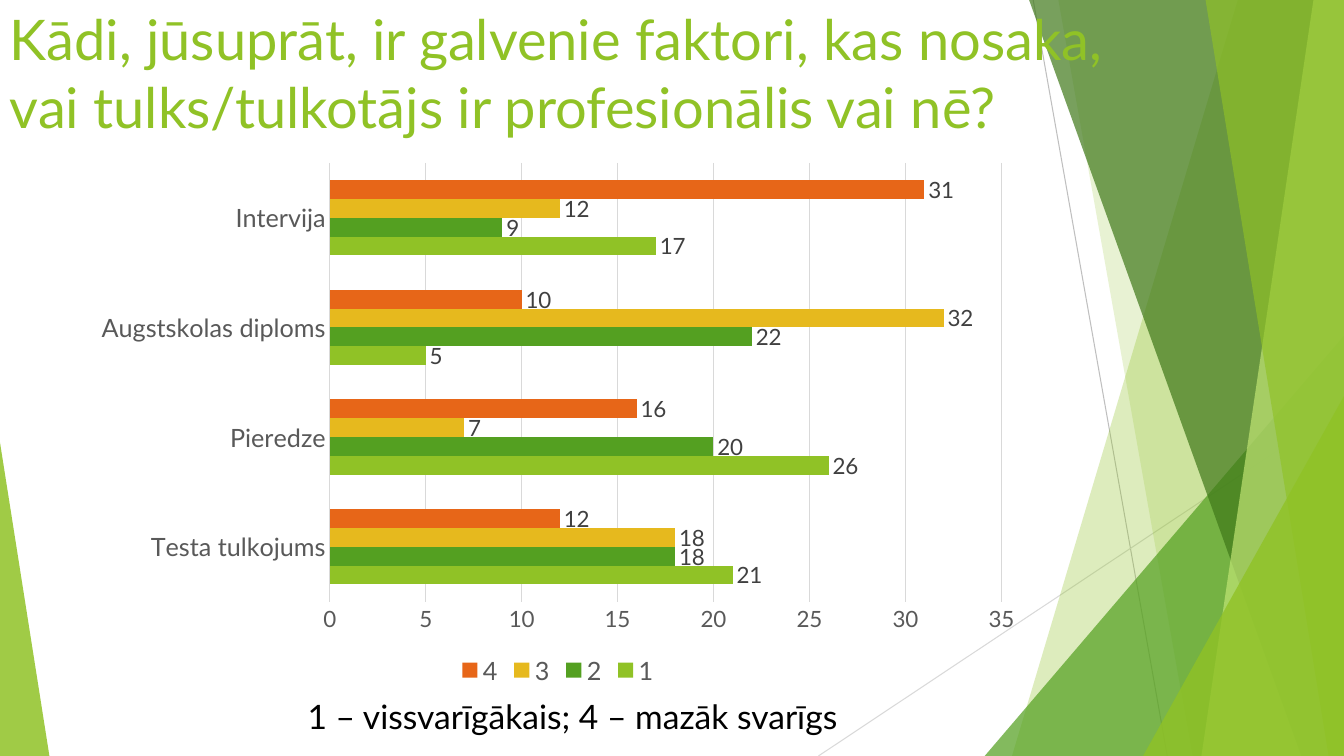
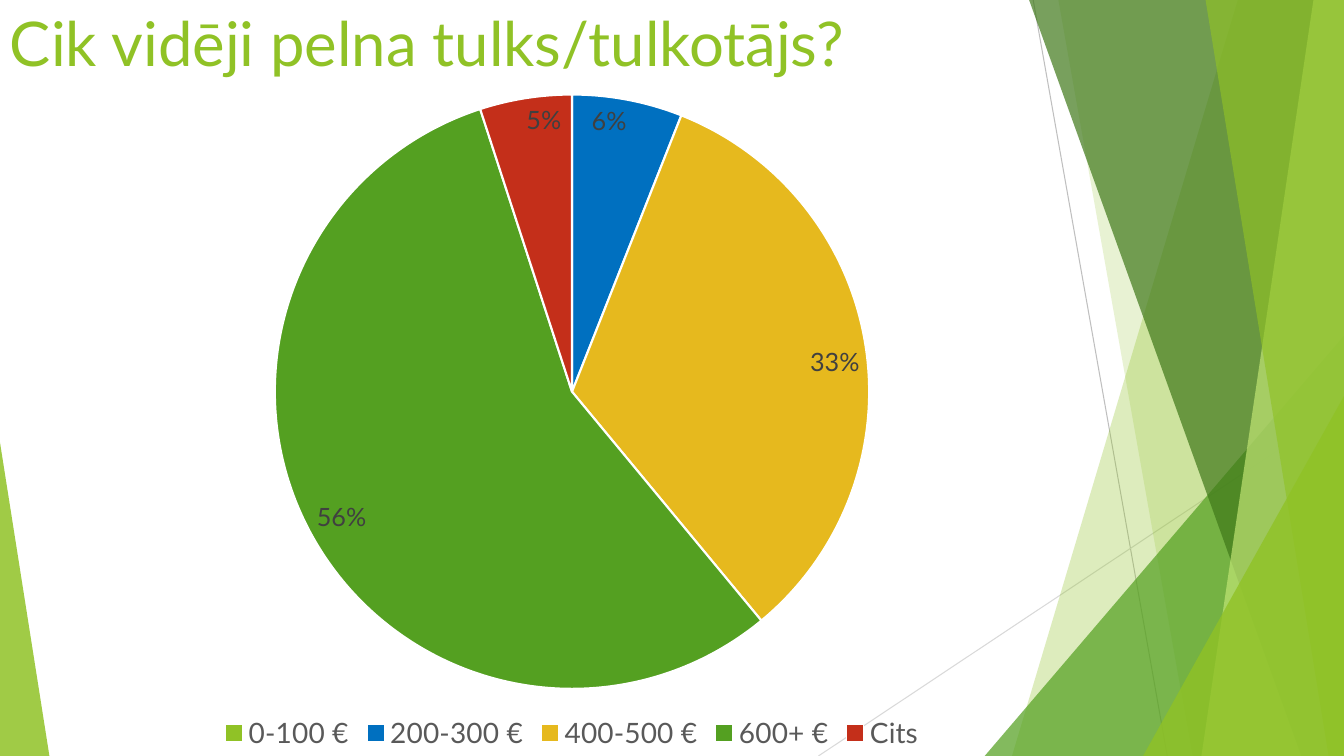
from dataclasses import dataclass

from lxml import etree
from pptx import Presentation
from pptx import util as u
from pptx.chart import data as chart_data
from pptx.dml import color
from pptx.enum import chart as chart_enum
from pptx.enum import shapes, text
from pptx.oxml import ns


@dataclass(frozen=True)
class Theme:
    font: str = "Lato"
    lime: str = "90C226"
    green: str = "54A021"
    forest: str = "3F7819"
    pale: str = "C0E474"
    gold: str = "E6B91E"
    orange: str = "E76618"
    blue: str = "0070C0"
    red: str = "C42F1A"
    white: str = "FFFFFF"
    black: str = "000000"
    label: str = "404040"
    muted: str = "595959"
    rule: str = "BFBFBF"
    grid: str = "D9D9D9"
    caption_size: int = 24
    hairline: float = 0.75


THEME = Theme()
WIDTH, HEIGHT = 960, 540

RULES = [
    ((738, 0), (833.8, HEIGHT), THEME.rule),
    ((WIDTH, 290.2), (584.6, HEIGHT), THEME.grid),
]
BACK_BANDS = [(884.2, 722.9, THEME.lime, 30), (756, 851.8, THEME.lime, 20)]
BACK_TRIANGLE = (703.4, 239.8, 256.6, 1, THEME.green, 72)
FRONT_BANDS = [
    (735.1, 929.5, THEME.forest, 70),
    (938.2, 858.2, THEME.pale, 70),
    (861.1, 949, THEME.lime, 65),
]
FRONT_TRIANGLES = [
    (816.5, 283, 143.5, 1, THEME.lime, 80),
    (0, 316.1, 35.3, 0, THEME.lime, 85),
]


def points(*lengths):
    return [u.Pt(length) for length in lengths]


def rgb(value):
    return color.RGBColor.from_string(value)


def style_font(font, size, value):
    font.name = THEME.font
    font.size = u.Pt(size)
    font.color.rgb = rgb(value)


def paint(target, value):
    target.format.fill.solid()
    target.format.fill.fore_color.rgb = rgb(value)


def style_line(line, value, width=THEME.hairline):
    line.color.rgb = rgb(value)
    line.width = u.Pt(width)


def fill_translucent(shape, value, opacity):
    shape.shadow.inherit = False
    shape.line.fill.background()
    shape.fill.solid()
    shape.fill.fore_color.rgb = rgb(value)
    swatch = shape._element.spPr.find(".//" + ns.qn("a:srgbClr"))
    etree.SubElement(swatch, ns.qn("a:alpha")).set("val", str(opacity * 1000))


def add_rule(page, start, end, value):
    rule = page.shapes.add_connector(
        shapes.MSO_CONNECTOR.STRAIGHT, *points(*start, *end))
    style_line(rule.line, value)
    etree.SubElement(rule._element.spPr, ns.qn("a:effectLst"))


def add_band(page, top_left, bottom_left, value, opacity):
    builder = page.shapes.build_freeform(*points(top_left, 0))
    corners = [(WIDTH, 0), (WIDTH, HEIGHT), (bottom_left, HEIGHT)]
    builder.add_line_segments([points(*corner) for corner in corners])
    fill_translucent(builder.convert_to_shape(), value, opacity)


def add_triangle(page, left, top, width, apex, value, opacity):
    triangle = page.shapes.add_shape(
        shapes.MSO_SHAPE.ISOSCELES_TRIANGLE,
        *points(left, top, width, HEIGHT - top))
    triangle.adjustments[0] = apex
    fill_translucent(triangle, value, opacity)


def add_page(deck):
    page = deck.slides.add_slide(deck.slide_layouts[6])
    for rule in RULES:
        add_rule(page, *rule)
    for band in BACK_BANDS:
        add_band(page, *band)
    add_triangle(page, *BACK_TRIANGLE)
    for band in FRONT_BANDS:
        add_band(page, *band)
    for triangle in FRONT_TRIANGLES:
        add_triangle(page, *triangle)
    return page


def add_text(page, place, words, size, value, align=text.PP_ALIGN.LEFT):
    box = page.shapes.add_textbox(*points(*place))
    box.text_frame.word_wrap = True
    box.text_frame.text = words
    para = box.text_frame.paragraphs[0]
    para.alignment = align
    for span in para.runs:
        style_font(span.font, size, value)


def add_title(page, words, width, size):
    add_text(page, (0, 0, width, 103.7), words, size, THEME.lime)


def add_chart(page, kind, place, content, legend_size):
    chart = page.shapes.add_chart(kind, *points(*place), content).chart
    style_font(chart.font, 10, THEME.black)
    chart.has_title = False
    chart.has_legend = True
    chart.legend.position = chart_enum.XL_LEGEND_POSITION.BOTTOM
    chart.legend.include_in_layout = False
    style_font(chart.legend.font, legend_size, THEME.muted)
    return chart


def label_values(series, size, position, number_format="General"):
    labels = series.data_labels
    labels.show_value = True
    labels.position = position
    labels.number_format = number_format
    labels.number_format_is_linked = False
    style_font(labels.font, size, THEME.label)
    return labels


def remove_label(labels, index):
    label = etree.Element(ns.qn("c:dLbl"))
    etree.SubElement(label, ns.qn("c:idx")).set("val", str(index))
    etree.SubElement(label, ns.qn("c:delete")).set("val", "1")
    labels._element.insert(0, label)


def style_axis(axis, size):
    axis.major_tick_mark = chart_enum.XL_TICK_MARK.NONE
    axis.minor_tick_mark = chart_enum.XL_TICK_MARK.NONE
    style_font(axis.tick_labels.font, size, THEME.muted)


def add_factor_chart(page):
    ranks = [
        ("1", (21, 26, 5, 17), THEME.lime),
        ("2", (18, 20, 22, 9), THEME.green),
        ("3", (18, 7, 32, 12), THEME.gold),
        ("4", (12, 16, 10, 31), THEME.orange),
    ]
    content = chart_data.CategoryChartData()
    content.categories = [
        "Testa tulkojums", "Pieredze", "Augstskolas diploms", "Intervija"]
    for name, values, _ in ranks:
        content.add_series(name, values)
    chart = add_chart(page, chart_enum.XL_CHART_TYPE.BAR_CLUSTERED,
                      (59, 108.7, 679, 384.5), content, 18)
    plot = chart.plots[0]
    plot.gap_width = 182
    plot.vary_by_categories = False
    for series, (_, _, value) in zip(plot.series, ranks):
        paint(series, value)
        label_values(series, 16, chart_enum.XL_LABEL_POSITION.OUTSIDE_END)
    style_axis(chart.category_axis, 18)
    style_line(chart.category_axis.format.line, THEME.grid)
    value_axis = chart.value_axis
    style_axis(value_axis, 16)
    value_axis.minimum_scale, value_axis.maximum_scale = 0, 35
    value_axis.major_unit = 5
    value_axis.format.line.fill.background()
    style_line(value_axis.major_gridlines.format.line, THEME.grid)


def add_income_chart(page):
    slices = [
        ("0-100 €", 0, THEME.lime),
        ("200-300 €", 0.06, THEME.blue),
        ("400-500 €", 0.33, THEME.gold),
        ("600+ €", 0.56, THEME.green),
        ("Cits", 0.05, THEME.red),
    ]
    content = chart_data.CategoryChartData(number_format="0%")
    content.categories = [name for name, _, _ in slices]
    content.add_series("Series 1", [share for _, share, _ in slices])
    chart = add_chart(page, chart_enum.XL_CHART_TYPE.PIE,
                      (0, 57.6, 817.2, 482.4), content, 20)
    chart.plots[0].vary_by_categories = True
    series = chart.plots[0].series[0]
    labels = label_values(
        series, 18, chart_enum.XL_LABEL_POSITION.INSIDE_END, "0%")
    for index, (_, share, value) in enumerate(slices):
        point = series.points[index]
        paint(point, value)
        style_line(point.format.line, THEME.white, 1.5)
        if share == 0:
            remove_label(labels, index)


def main():
    deck = Presentation()
    deck.slide_width, deck.slide_height = points(WIDTH, HEIGHT)

    factors = add_page(deck)
    add_title(factors, "Kādi, jūsuprāt, ir galvenie faktori, kas nosaka, "
              "vai tulks/tulkotājs ir profesionālis vai nē?", 817.2, 40)
    add_factor_chart(factors)
    add_text(factors, (152.6, 493.2, 512.6, 36),
             "1 – vissvarīgākais; 4 – mazāk svarīgs",
             THEME.caption_size, THEME.black, text.PP_ALIGN.CENTER)

    income = add_page(deck)
    add_title(income, "Cik vidēji pelna tulks/tulkotājs?", 784.1, 44)
    add_income_chart(income)

    deck.save("out.pptx")


if __name__ == "__main__":
    main()
